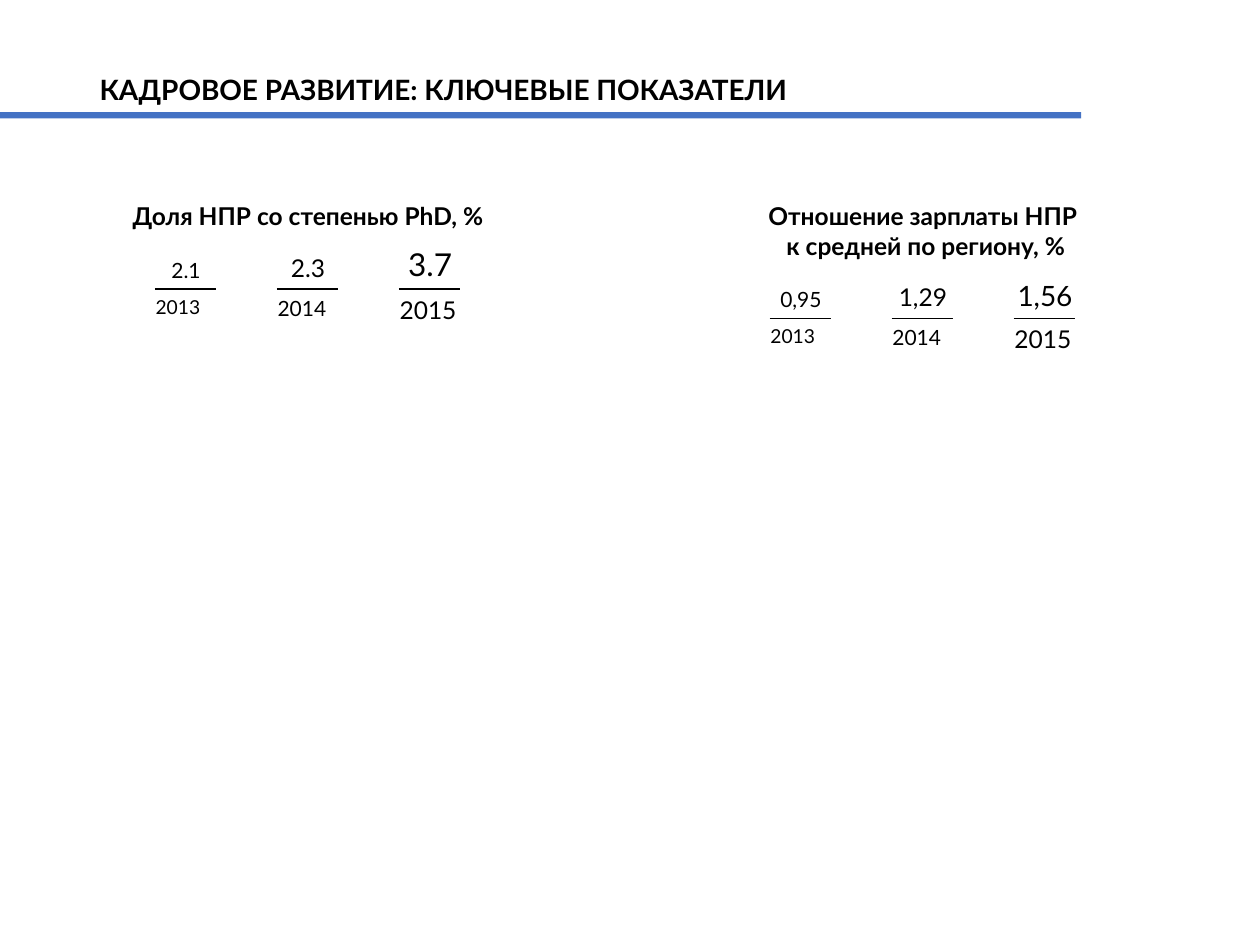
from lxml import etree
from pptx import Presentation
from pptx.dml.color import RGBColor
from pptx.enum.shapes import MSO_SHAPE
from pptx.enum.text import MSO_ANCHOR, PP_ALIGN
from pptx.oxml.ns import qn
from pptx.util import Inches, Pt

BLACK = RGBColor(0x00, 0x00, 0x00)
BLUE = RGBColor(0x44, 0x72, 0xC4)
FONT = "Lato"
RECTANGLE = MSO_SHAPE.RECTANGLE
TOP, MIDDLE, BOTTOM = MSO_ANCHOR.TOP, MSO_ANCHOR.MIDDLE, MSO_ANCHOR.BOTTOM
LEFT, CENTER = PP_ALIGN.LEFT, PP_ALIGN.CENTER

TITLE_LAYOUT = 5
COLUMNS = 7
LINE_HEIGHT = 0.23
CELL_MARGIN = 0.05
ROW_HEIGHT = 0.41
YEARS = (("2013", 11), ("2014", 12), ("2015", 14))
PHD_SHARE = (("2.1", 12), ("2.3", 14), ("3.7", 18))
PAY_RATIO = (("0,95", 12), ("1,29", 14), ("1,56", 16))


def format_text(tf, size, bold, align):
    for p in tf.paragraphs:
        p.alignment = align
        for r in p.runs:
            r.font.name = FONT
            r.font.size = Pt(size)
            r.font.bold = bold
            r.font.color.rgb = BLACK


def write_cell(cell, text, size, bold, align, anchor):
    cell.text_frame.text = text
    cell.vertical_anchor = anchor
    format_text(cell.text_frame, size, bold, align)


def add_border(cell, side):
    line = etree.Element(qn(f"a:{side}"), w=str(Pt(1)))
    fill = etree.SubElement(line, qn("a:solidFill"))
    etree.SubElement(fill, qn("a:srgbClr"), val=str(BLACK))
    cell._tc.get_or_add_tcPr().insert(0, line)


def add_header(s, left, top, width, height):
    title = s.shapes.title
    title.left, title.top = Inches(left), Inches(top)
    title.width, title.height = Inches(width), Inches(height)
    tf = title.text_frame
    tf.text = "КАДРОВОЕ РАЗВИТИЕ: КЛЮЧЕВЫЕ ПОКАЗАТЕЛИ"
    tf.vertical_anchor = MIDDLE
    format_text(tf, 16, True, LEFT)

    rule = s.shapes.add_shape(
        RECTANGLE, 0, Inches(top + height), Inches(left + width), Inches(0.05)
    )
    rule.shadow.inherit = False
    rule.fill.solid()
    rule.fill.fore_color.rgb = BLUE
    rule.line.fill.background()


def add_indicator(s, left, top, width, heading, values):
    heading_height = len(heading) * LINE_HEIGHT + 2 * CELL_MARGIN
    heights = (heading_height, ROW_HEIGHT, ROW_HEIGHT)
    table = s.shapes.add_table(
        len(heights), COLUMNS, Inches(left), Inches(top),
        Inches(width), Inches(sum(heights)),
    ).table
    table.first_row = False
    table.horz_banding = False
    for row, height in zip(table.rows, heights):
        row.height = Inches(height)
    for cell in table.iter_cells():
        cell.fill.background()
        cell.margin_left = cell.margin_right = 0
        cell.margin_top = cell.margin_bottom = Inches(CELL_MARGIN)

    head = table.cell(0, 0)
    head.merge(table.cell(0, COLUMNS - 1))
    write_cell(head, "\n".join(heading), 14, True, CENTER, TOP)

    for i, ((value, value_size), (year, year_size)) in enumerate(zip(values, YEARS)):
        column = 2 * i + 1
        value_cell, year_cell = table.cell(1, column), table.cell(2, column)
        write_cell(value_cell, value, value_size, False, CENTER, BOTTOM)
        write_cell(year_cell, year, year_size, False, LEFT, TOP)
        add_border(value_cell, "lnB")
        add_border(year_cell, "lnT")


def main():
    prs = Presentation()
    prs.slide_width, prs.slide_height = Inches(10), Inches(7.5)
    s = prs.slides.add_slide(prs.slide_layouts[TITLE_LAYOUT])
    add_header(s, 0.69, 0.52, 7.89, 0.37)
    add_indicator(s, 0.75, 1.55, 3.39, ["Доля НПР со степенью PhD, %"], PHD_SHARE)
    add_indicator(
        s, 5.63, 1.55, 3.39,
        ["Отношение зарплаты НПР", " к средней по региону, %"], PAY_RATIO,
    )
    prs.save("out.pptx")


if __name__ == "__main__":
    main()
